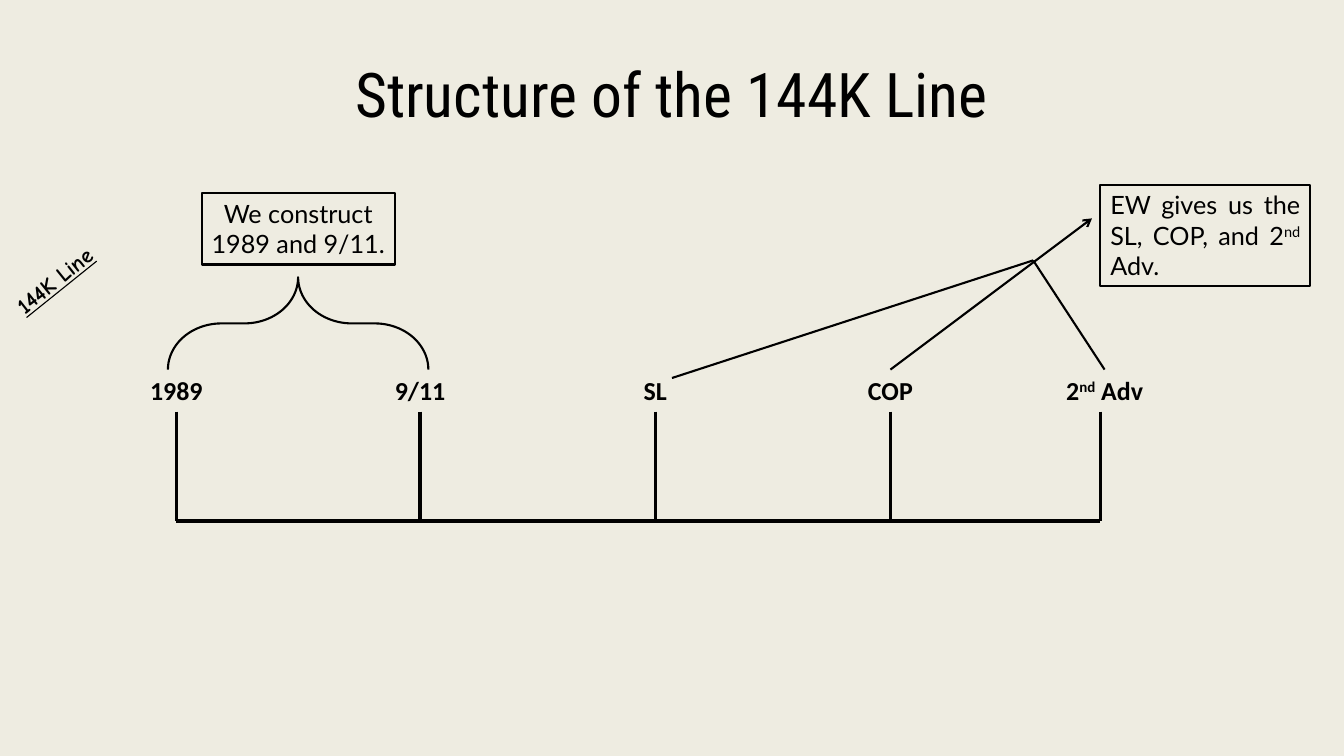
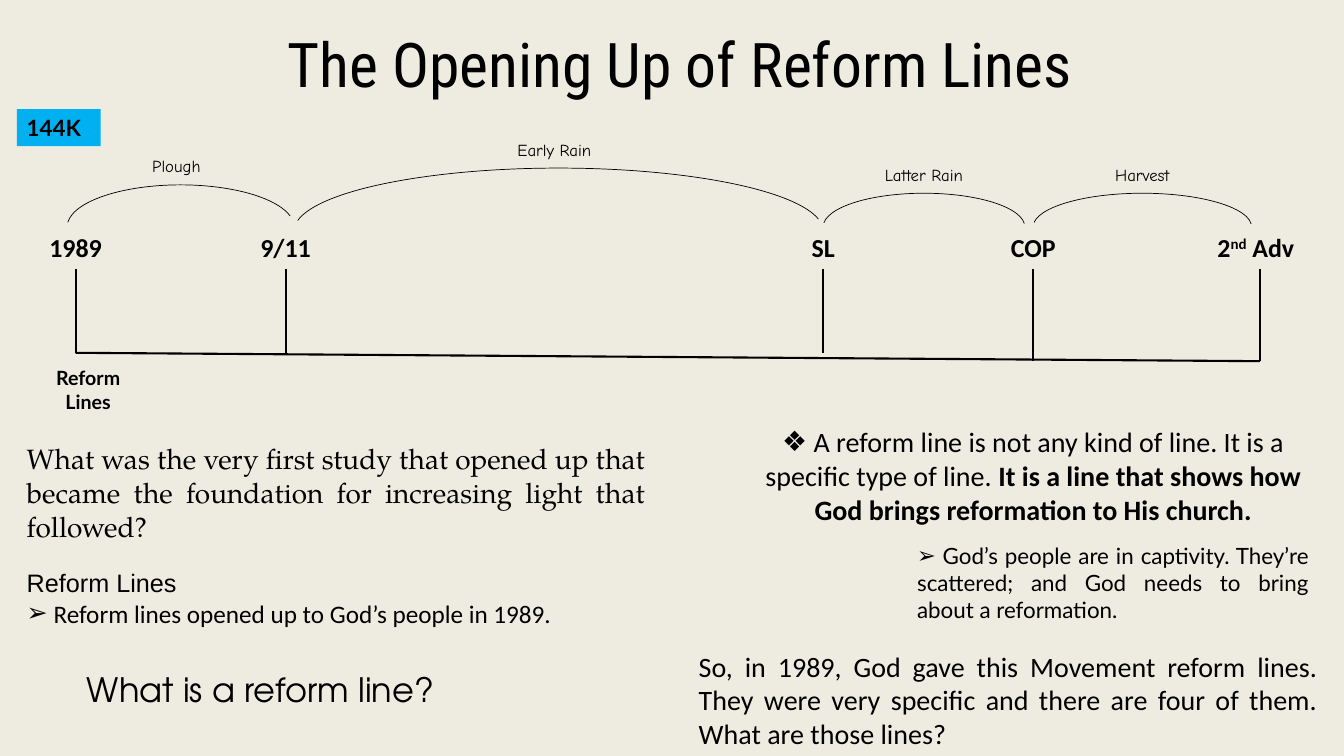
from dataclasses import dataclass

from lxml import etree
from pptx import Presentation
from pptx.dml.color import RGBColor
from pptx.enum.shapes import MSO_CONNECTOR, MSO_SHAPE
from pptx.enum.text import MSO_ANCHOR, MSO_AUTO_SIZE, PP_ALIGN
from pptx.oxml.ns import qn
from pptx.util import Inches, Pt

STRAIGHT = MSO_CONNECTOR.STRAIGHT
RECT, ARC, BRACE = MSO_SHAPE.RECTANGLE, MSO_SHAPE.ARC, MSO_SHAPE.RIGHT_BRACE
LEFT, CENTER, JUSTIFY = PP_ALIGN.LEFT, PP_ALIGN.CENTER, PP_ALIGN.JUSTIFY
TOP, MIDDLE = MSO_ANCHOR.TOP, MSO_ANCHOR.MIDDLE
GROW, FIXED = MSO_AUTO_SIZE.SHAPE_TO_FIT_TEXT, MSO_AUTO_SIZE.NONE

COLS, ROWS = 160, 90
ARC_START = 163.39
TITLE_ONLY = 5


@dataclass(frozen=True)
class Theme:
    # Colours
    paper: str = "EEECE1"
    ink: str = "000000"
    accent: str = "00B0F0"
    # Fonts
    title: str = "Roboto Condensed"
    body: str = "Calibri"
    box: str = "Lato"
    hand: str = "Comic Neue"
    serif: str = "TeX Gyre Pagella"
    round: str = "TeX Gyre Adventor"
    plain: str = "Arial"
    # Type sizes
    title_pt: float = 44
    query_pt: float = 24
    large_pt: float = 20
    mark_pt: float = 18.5
    body_pt: float = 18
    small_pt: float = 16
    caption_pt: float = 14
    arc_pt: float = 12
    # Line widths
    hair: float = 0.5
    thin: float = 1.5
    medium: float = 2.25
    thick: float = 3


T = Theme()
SECOND_ADVENT = ["2", ("nd", {"superscript": True}), " Adv"]


def rgb(value):
    return RGBColor.from_string(value)


class Deck:
    """Holds the style and the current slide; lengths are grid columns and rows."""

    def __init__(self):
        self.prs = Presentation()
        self.prs.slide_width, self.prs.slide_height = Inches(13.33), Inches(7.5)
        fill = self.prs.slide_master.background.fill
        fill.solid()
        fill.fore_color.rgb = rgb(T.paper)

    def x(self, cols):
        return round(self.prs.slide_width * cols / COLS)

    def y(self, rows):
        return round(self.prs.slide_height * rows / ROWS)

    def frame(self, left, top, width, height):
        return self.x(left), self.y(top), self.x(width), self.y(height)

    def slide(self, title, left, top):
        self.s = self.prs.slides.add_slide(self.prs.slide_layouts[TITLE_ONLY])
        sp = self.s.shapes.title
        sp.left, sp.top, sp.width, sp.height = self.frame(left, top, 144, 15)
        self.put_text(sp, [[title]], T.title, T.title_pt, CENTER, anchor=MIDDLE, fit=FIXED)

    def put_text(self, sp, paragraphs, font, size, align=LEFT, bullet=None,
                 anchor=TOP, fit=GROW, **style):
        """Each paragraph is a list of strings or (string, format) pairs."""
        tf = sp.text_frame
        settings = {"word_wrap": True, "auto_size": fit, "vertical_anchor": anchor}
        for name, value in settings.items():
            setattr(tf, name, value)
        for i, runs in enumerate(paragraphs):
            p = tf.paragraphs[0] if i == 0 else tf.add_paragraph()
            p.alignment = align
            for run in runs:
                text, extra = (run, {}) if isinstance(run, str) else run
                r = p.add_run()
                r.text = text
                look = {"name": font, "size": Pt(size), **style, **extra}
                if look.pop("superscript", False):
                    r._r.get_or_add_rPr().set("baseline", "30000")
                for name, value in look.items():
                    setattr(r.font, name, value)
                r.font.color.rgb = rgb(T.ink)
        if bullet:  # the last paragraph carries the bullet
            pPr = p._p.get_or_add_pPr()
            etree.SubElement(pPr, qn("a:buFont")).set("typeface", T.plain)
            etree.SubElement(pPr, qn("a:buChar")).set("char", bullet)

    def text(self, at, paragraphs, font, size, align=LEFT, rotation=0, **style):
        sp = self.s.shapes.add_textbox(*self.frame(*at))
        sp.rotation = rotation
        self.put_text(sp, paragraphs, font, size, align, **style)

    def outline(self, sp, width):
        sp.line.color.rgb = rgb(T.ink)
        sp.line.width = Pt(width)

    def box(self, at, runs, size, align, fill=None, **style):
        sp = self.s.shapes.add_shape(RECT, *self.frame(*at))
        sp.shadow.inherit = False
        if fill:
            sp.fill.solid()
            sp.fill.fore_color.rgb = rgb(fill)
            sp.line.fill.background()
        else:
            sp.fill.background()
            self.outline(sp, T.thin)
        self.put_text(sp, [runs], T.box, size, align, **style)

    def line(self, start, end, width=T.thin, arrow=False):
        (x1, y1), (x2, y2) = start, end
        c = self.s.shapes.add_connector(
            STRAIGHT, self.x(x1), self.y(y1), self.x(x2), self.y(y2))
        self.outline(c, width)
        spPr = c._element.spPr
        if arrow:
            etree.SubElement(spPr.find(qn("a:ln")), qn("a:tailEnd")).set("type", "arrow")
        etree.SubElement(spPr, qn("a:effectLst"))

    def upright(self, kind, at, adjust, width):
        """Draw a sideways preset turned a quarter left, so that it fills `at`."""
        left, top, w, h = at
        shift = (w - h) / 2
        sp = self.s.shapes.add_shape(kind, *self.frame(left + shift, top - shift, h, w))
        sp.rotation = 270
        sp.shadow.inherit = False
        sp.fill.background()
        for i, value in enumerate(adjust):
            sp.adjustments[i] = value
        self.outline(sp, width)

    def timeline(self, columns, label_top, tick_top, bottoms, base_pt, tick_pt, last_center):
        """Base line, a tick per waymark, and the five waymark labels."""
        self.line((columns[0], bottoms[0]), (columns[-1], bottoms[-1]), base_pt)
        for col, bottom in zip(columns, bottoms):
            self.line((col, tick_top), (col, bottom), tick_pt)
        names = [["1989"], ["9/11"], ["SL"], ["COP"], SECOND_ADVENT]
        centers = [*columns[:-1], last_center]
        for name, center in zip(names, centers):
            width = 13 if name is SECOND_ADVENT else 10
            self.text((center - width / 2, label_top, width, 5), [name],
                      T.body, T.mark_pt, CENTER, bold=True)

    def season(self, name, left, top, width, height, end):
        """An arc over a period, with its name centred above."""
        self.upright(ARC, (left, top, width, height), (ARC_START, end), T.hair)
        self.text((left + width // 2 - 10, top - 4, 20, 3.6), [[name]],
                  T.hand, T.arc_pt, CENTER)


def structure_slide(d):
    d.slide("Structure of the 144K Line", 8, 3.6)
    d.timeline((21, 50, 78, 106, 131), 44, 49, [62] * 5, T.thick, T.medium, 131.5)
    d.text((-0.7, 29.4, 18.7, 4.4), [["144K Line"]], T.hand, T.small_pt,
           rotation=321.2, bold=True, underline=True)
    # Three waymarks meet and point to their source
    meeting = (123, 31)
    d.line((106, 44), (130, 26), arrow=True)
    d.line((80, 45), meeting)
    d.line((131.5, 44), meeting)
    d.box((131, 22, 25, 12.1),
          ["EW gives us the SL, COP, and 2", ("nd", {"superscript": True}), " Adv."],
          T.body_pt, JUSTIFY)
    # Brace over the first two waymarks
    d.upright(BRACE, (20, 33, 31, 11), (0.58, 0.5), T.thin)
    d.box((24, 23, 23, 8.5), ["We construct 1989 and 9/11."], T.body_pt, CENTER)


def opening_slide(d):
    d.slide("The Opening Up of Reform Lines", 9, 0)
    d.timeline((9, 34, 98, 123, 150), 27, 32, (42, 42, 42, 43, 43), T.thin, T.thin, 149.5)
    d.box((2, 13, 10, 4.4), ["144K"], T.small_pt, LEFT, fill=T.accent, bold=True)
    # Seasons
    for season in (
        ("Plough", 8, 22, 27, 10, 50.6),
        ("Early Rain", 35, 20, 63, 15, 52.41),
        ("Latter Rain", 98, 23, 24, 8, 52.89),
        ("Harvest", 123, 23, 26, 8, 53.05),
    ):
        d.season(*season)
    # Left column
    d.text((4, 43, 13, 6.8), [["Reform Lines"]], T.box, T.caption_pt, CENTER, bold=True)
    d.text((2, 52, 76, 13.3),
           [["What was the very first study that opened up that became the "
             "foundation for increasing light that followed?"]],
           T.serif, T.large_pt, JUSTIFY)
    d.text((2, 67, 74, 8.5),
           [["Reform Lines"],
            [(" Reform lines opened up to God’s people in 1989.", {"name": T.body})]],
           T.plain, T.body_pt, bullet="➢")
    d.text((7, 79, 48, 6), [["What is a reform line?"]], T.round, T.query_pt, CENTER)
    # Right column
    d.text((89, 50, 68, 13.3),
           [[" A reform line is not any kind of line. It is a specific type of line. ",
             ("It is a line that shows how God brings reformation to His church.",
              {"bold": True})]],
           T.body, T.large_pt, CENTER, bullet="❖")
    d.text((108, 64, 49, 10.9),
           [[" God’s people are in captivity. They’re scattered; and God needs to "
             "bring about a reformation."]],
           T.box, T.small_pt, JUSTIFY, bullet="➢")
    d.text((82, 76.7, 76, 13.3),
           [["So, in 1989, God gave this Movement reform lines. They were very "
             "specific and there are four of them. What are those lines?"]],
           T.body, T.large_pt, JUSTIFY)


def main():
    d = Deck()
    structure_slide(d)
    opening_slide(d)
    d.prs.save("out.pptx")


if __name__ == "__main__":
    main()
